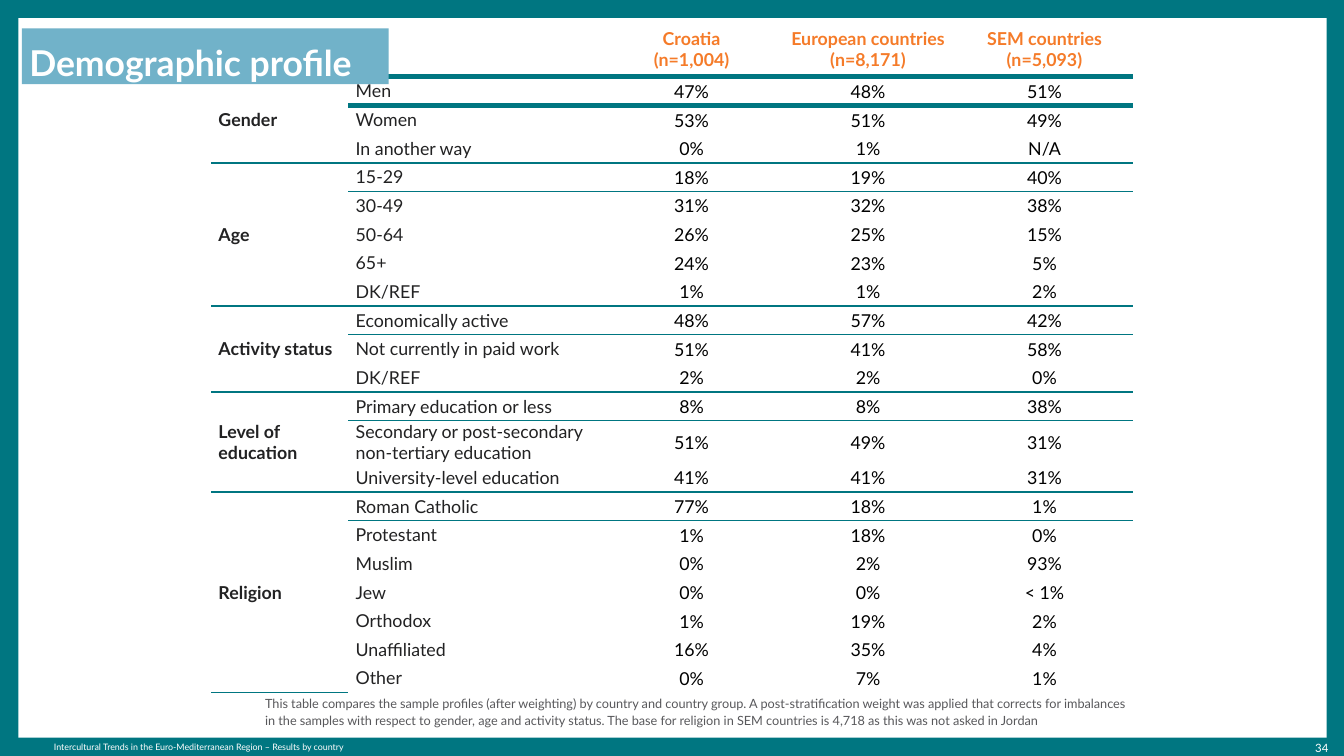
import pptx
import pptx.dml.color
import pptx.enum.shapes
import pptx.enum.text
import pptx.oxml.ns
import pptx.util
from lxml import etree

Inches = pptx.util.Inches
Pt = pptx.util.Pt
RGBColor = pptx.dml.color.RGBColor
ALIGN = pptx.enum.text.PP_ALIGN
ANCHOR = pptx.enum.text.MSO_ANCHOR

FONT = "Lato"
TEAL = RGBColor(0x00, 0x76, 0x81)
LIGHT_BLUE = RGBColor(0x71, 0xB2, 0xC9)
ORANGE = RGBColor(0xF5, 0x7B, 0x29)
WHITE = RGBColor(0xFF, 0xFF, 0xFF)
BLACK = RGBColor(0x00, 0x00, 0x00)
CHARCOAL = RGBColor(0x22, 0x22, 0x23)
GREY = RGBColor(0x58, 0x58, 0x5B)

PLAIN_TABLE_STYLE = "{2D5ABB26-0587-4C30-8999-92F81FD0307C}"
COLUMN_WIDTHS = (1.5, 2.79, 1.93, 1.93, 1.93)
HEADER_HEIGHT, ROW_HEIGHT, TALL_ROW_HEIGHT = 0.62, 0.31, 0.46
TALL_ROW = "Secondary or post-secondary non-tertiary education"
HEADER_LINE, GROUP_LINE = 4.5, 1.5
LABEL_INSETS = (0.08, 0.04, 0.08, 0.04)
TALL_INSETS = (0.08, 0, 0.08, 0)
VALUE_INSETS = (0.01, 0.01, 0.01, 0)

HEADERS = ("Croatia\n(n=1,004)", "European countries (n=8,171)",
           "SEM countries (n=5,093)")
PROFILE = {
    "Gender": [
        ("Men", "47%", "48%", "51%"),
        ("Women", "53%", "51%", "49%"),
        ("In another way", "0%", "1%", "N/A"),
    ],
    "Age": [
        ("15-29", "18%", "19%", "40%"),
        ("30-49", "31%", "32%", "38%"),
        ("50-64", "26%", "25%", "15%"),
        ("65+", "24%", "23%", "5%"),
        ("DK/REF", "1%", "1%", "2%"),
    ],
    "Activity status": [
        ("Economically active", "48%", "57%", "42%"),
        ("Not currently in paid work", "51%", "41%", "58%"),
        ("DK/REF", "2%", "2%", "0%"),
    ],
    "Level of education": [
        ("Primary education or less", "8%", "8%", "38%"),
        (TALL_ROW, "51%", "49%", "31%"),
        ("University-level education", "41%", "41%", "31%"),
    ],
    "Religion": [
        ("Roman Catholic", "77%", "18%", "1%"),
        ("Protestant", "1%", "18%", "0%"),
        ("Muslim", "0%", "2%", "93%"),
        ("Jew", "0%", "0%", "< 1%"),
        ("Orthodox", "1%", "19%", "2%"),
        ("Unaffiliated", "16%", "35%", "4%"),
        ("Other", "0%", "7%", "1%"),
    ],
}
NOTE = ("This table compares the sample profiles (after weighting) by country and "
        "country group. A post-stratification weight was applied that corrects for "
        "imbalances in the samples with respect to gender, age and activity status. "
        "The base for religion in SEM countries is 4,718 as this was not asked in Jordan")


def write(frame, text, size=14, color=BLACK, bold=False, align=ALIGN.LEFT, spacing=None):
    """Fill a text frame, one paragraph per line of text."""
    frame.text = text
    for paragraph in frame.paragraphs:
        paragraph.alignment = align
        if spacing:
            paragraph.line_spacing = spacing
        font = paragraph.font
        font.name, font.size, font.bold = FONT, Pt(size), bold
        font.color.rgb = color


def set_insets(target, insets):
    """Set left, top, right and bottom margins of a cell or text frame."""
    (target.margin_left, target.margin_top,
     target.margin_right, target.margin_bottom) = map(Inches, insets)


def add_text(slide, box, text, anchor=ANCHOR.TOP, wrap=True, **text_format):
    frame = slide.shapes.add_textbox(*map(Inches, box)).text_frame
    set_insets(frame, (0, 0, 0, 0))
    frame.word_wrap = wrap
    frame.vertical_anchor = anchor
    write(frame, text, **text_format)


def add_panel(slide):
    panel = slide.shapes.add_shape(pptx.enum.shapes.MSO_SHAPE.RECTANGLE,
                                   *map(Inches, (0.2, 0.2, 14.31, 7.87)))
    panel.shadow.inherit = False
    panel.fill.solid()
    panel.fill.fore_color.rgb = WHITE
    panel.line.fill.background()


def fill_cell(cell, text, insets, **text_format):
    set_insets(cell, insets)
    cell.vertical_anchor = ANCHOR.MIDDLE
    write(cell.text_frame, text, **text_format)


def add_border(cell, side, width):
    """Draw a teal line on one side of a cell: lnT or lnB."""
    line = etree.Element(pptx.oxml.ns.qn(f"a:{side}"), w=str(Pt(width)))
    fill = etree.SubElement(line, pptx.oxml.ns.qn("a:solidFill"))
    etree.SubElement(fill, pptx.oxml.ns.qn("a:srgbClr"), val=str(TEAL))
    properties = cell._tc.get_or_add_tcPr()
    borders = properties.findall(pptx.oxml.ns.qn("a:lnT"))
    properties.insert(len(borders), line)


def rule_below(table, row, width, columns):
    """Draw a line under a row, shared with the row that follows."""
    for column in columns:
        add_border(table.cell(row, column), "lnB", width)
        if row + 1 < len(table.rows):
            add_border(table.cell(row + 1, column), "lnT", width)


def add_group(table, first_row, group, answers):
    """Fill the rows of one group and return its last row."""
    last_row = first_row + len(answers) - 1
    for row, (answer, *values) in enumerate(answers, first_row):
        tall = answer == TALL_ROW
        table.rows[row].height = Inches(TALL_ROW_HEIGHT if tall else ROW_HEIGHT)
        fill_cell(table.cell(row, 1), answer, TALL_INSETS if tall else LABEL_INSETS,
                  color=CHARCOAL)
        for column, value in enumerate(values, 2):
            fill_cell(table.cell(row, column), value, VALUE_INSETS, align=ALIGN.CENTER)
    label = table.cell(first_row, 0)
    label.merge(table.cell(last_row, 0))
    fill_cell(label, group, LABEL_INSETS, color=CHARCOAL, bold=True)
    if last_row + 1 < len(table.rows):
        add_border(label, "lnB", GROUP_LINE)
        rule_below(table, last_row, GROUP_LINE, range(len(COLUMN_WIDTHS)))
    else:
        add_border(label, "lnB", GROUP_LINE)
        rule_below(table, last_row, GROUP_LINE, [0])
    return last_row


def add_profile_table(slide):
    row_count = 1 + sum(map(len, PROFILE.values()))
    table = slide.shapes.add_table(row_count, len(COLUMN_WIDTHS),
                                   *map(Inches, (2.31, 0.22, 10.08, 7.34))).table
    table.first_row = table.horz_banding = False
    table._tbl.tblPr.find(pptx.oxml.ns.qn("a:tableStyleId")).text = PLAIN_TABLE_STYLE
    for column, width in zip(table.columns, COLUMN_WIDTHS):
        column.width = Inches(width)
    for cell in table.iter_cells():
        cell.fill.background()

    table.rows[0].height = Inches(HEADER_HEIGHT)
    for column, header in enumerate(HEADERS, 2):
        fill_cell(table.cell(0, column), header, VALUE_INSETS, color=ORANGE,
                  bold=True, align=ALIGN.CENTER)
    rule_below(table, 0, HEADER_LINE, range(len(COLUMN_WIDTHS)))

    last_row = 0
    for group, answers in PROFILE.items():
        last_row = add_group(table, last_row + 1, group, answers)


def place_title(slide):
    """Format the title and bring it in front of the table."""
    title = slide.shapes.title
    title.left, title.top, title.width, title.height = map(Inches, (0.24, 0.31, 4.01, 0.61))
    title.fill.solid()
    title.fill.fore_color.rgb = LIGHT_BLUE
    frame = title.text_frame
    set_insets(frame, (0.08, 0.04, 0.08, 0))
    frame.auto_size = pptx.enum.text.MSO_AUTO_SIZE.NONE
    frame.vertical_anchor = ANCHOR.BOTTOM
    write(frame, "Demographic profile", size=28, color=WHITE, bold=True, spacing=Pt(41))
    title.element.getparent().append(title.element)


def main():
    presentation = pptx.Presentation()
    presentation.slide_width, presentation.slide_height = Inches(14.7), Inches(8.27)
    slide = presentation.slides.add_slide(presentation.slide_layouts[5])
    slide.background.fill.solid()
    slide.background.fill.fore_color.rgb = TEAL

    add_panel(slide)
    add_text(slide, (14.06, 8.09, 0.47, 0.17), "34", size=9, color=WHITE,
             align=ALIGN.RIGHT, spacing=1.1)
    add_text(slide, (0.59, 8.07, 5.35, 0.2),
             "Intercultural Trends in the Euro-Mediterranean Region – Results by country",
             anchor=ANCHOR.MIDDLE, wrap=False, size=7, color=WHITE)
    add_text(slide, (2.9, 7.15, 9.43, 0.81), NOTE, anchor=ANCHOR.BOTTOM,
             size=10, color=GREY, spacing=1.1)
    add_profile_table(slide)
    place_title(slide)
    presentation.save("out.pptx")


if __name__ == "__main__":
    main()
